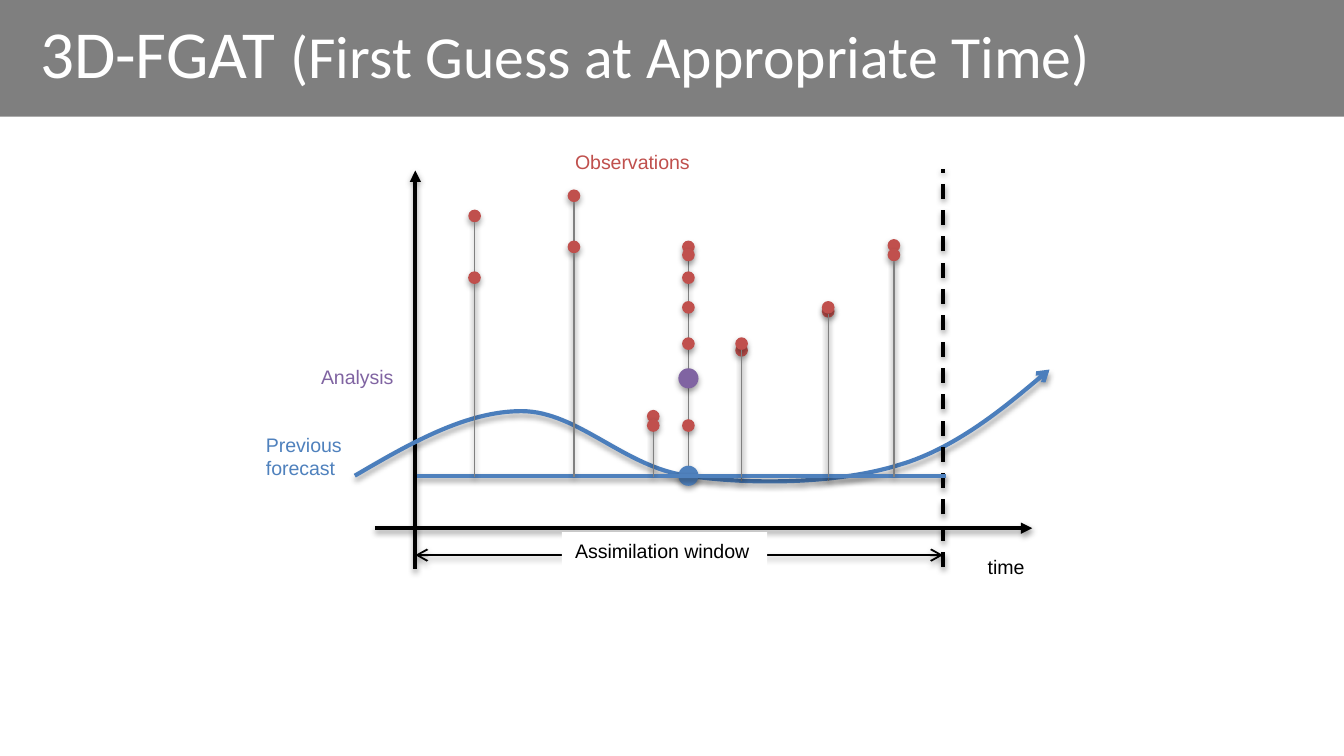
from pptx import Presentation
from pptx.dml.color import RGBColor
from pptx.enum.dml import MSO_LINE
from pptx.enum.shapes import MSO_CONNECTOR, MSO_SHAPE
from pptx.enum.text import MSO_ANCHOR
from pptx.oxml import parse_xml
from pptx.oxml.ns import qn, nsdecls
from pptx.util import Pt
from lxml import etree

BLACK, WHITE, GREY = "000000", "FFFFFF", "808080"
RED, BLUE, CURVE_BLUE, PURPLE = "C0504D", "4F81BD", "4B7EBC", "8064A2"
DOT, STATE = 6.8, 10.8  # diameters

# Observation stalks: x, dot centre, foot of the stalk
BACK_STALKS = [(119.3, 39.7, 146.5), (308.7, 90.8, 181.8), (343.9, 55.5, 174.6),
               (262.3, 111.7, 181.8), (215, 147, 174.6), (172.5, 28.9, 151.5)]
FRONT_STALKS = [(119.2, 72.8, 179.5), (172.5, 56.3, 179.5), (215, 152, 179.5),
                (262.3, 108.1, 179.5), (308.7, 88.7, 179.5), (343.9, 60.6, 179.5)]
CENTRE_X, BASE_Y = 233.8, 178.9
CENTRE_DOTS = [72.8, 56.3, 152, 108.1, 88.7, 60.6]
WINDOW = (87.5, 370.2)  # left and right end of the assimilation window
# Start point, then two handles and an end point for each Bezier segment
FORECAST = [(55.1, 178.9),
            (84.6, 161.6), (114.8, 144.3), (144.4, 144.3),
            (174.6, 144.3), (199.8, 174.6), (233.6, 178.9),
            (267.5, 183.9), (314.3, 183.2), (346.7, 173.1),
            (379.1, 163.8), (427.3, 122), (427.3, 122)]
LABELS = [("time", 387, 217.8, 34.6, 20.2, BLACK),
          ("Previous\nforecast", 0.4, 152.2, 56, 32.4, BLUE),
          ("Observations", 166, 1, 77, 20.2, RED),
          ("Analysis", 29.9, 116.2, 54, 20.2, PURPLE)]


def rgb(value):
    return RGBColor.from_string(value)


def add_shadow(sp, alpha=35, dist=1.8):
    sp._element.spPr.append(parse_xml(
        f'<a:effectLst {nsdecls("a")}><a:outerShdw blurRad="{Pt(3.1)}" dist="{Pt(dist)}" '
        f'dir="5400000" rotWithShape="0"><a:srgbClr val="{BLACK}">'
        f'<a:alpha val="{alpha * 1000}"/></a:srgbClr></a:outerShdw></a:effectLst>'))


def set_line(sp, color, width, head=None, tail=None, dash=None):
    sp.line.color.rgb = rgb(color)
    sp.line.width = Pt(width)
    if dash:
        sp.line.dash_style = dash
    ln = sp._element.spPr.find(qn("a:ln"))
    for tag, kind in (("a:headEnd", head), ("a:tailEnd", tail)):
        if kind:
            etree.SubElement(ln, qn(tag)).set("type", kind)


def set_text(tf, paragraphs, **formats):
    """Fill a frame; each paragraph is a list of (text, size) runs."""
    for i, runs in enumerate(paragraphs):
        p = tf.paragraphs[0] if i == 0 else tf.add_paragraph()
        for text, size in runs:
            r = p.add_run()
            r.text = text
            r.font.color.rgb = rgb(formats["color"])
            for name, value in {"name": formats["font"], "size": Pt(size)}.items():
                setattr(r.font, name, value)


def add_block(slide, kind, x, y, w, h, fill):
    sp = slide.shapes.add_shape(kind, Pt(x), Pt(y), Pt(w), Pt(h))
    sp.fill.solid()
    sp.fill.fore_color.rgb = rgb(fill)
    sp.line.fill.background()
    return sp


def add_title(slide, x, y, w, h):
    # Half-transparent band
    band = add_block(slide, MSO_SHAPE.RECTANGLE, x, y, w, h, BLACK)
    band.shadow.inherit = False
    color = band._element.spPr.find(qn("a:solidFill"))[0]
    etree.SubElement(color, qn("a:alpha")).set("val", "50000")
    # Title text
    tf = slide.shapes.add_textbox(Pt(x + 14.4), Pt(y), Pt(600.5), Pt(h - 7.2)).text_frame
    tf.word_wrap = True
    tf.vertical_anchor = MSO_ANCHOR.MIDDLE
    set_text(tf, [[("3D-FGAT ", 36), ("(First Guess at Appropriate Time)", 32)]],
             font="Calibri", color=WHITE)


def add_diagram(slide, left, top):
    def line(x1, y1, x2, y2, color, width, **ends):
        cx = slide.shapes.add_connector(MSO_CONNECTOR.STRAIGHT, Pt(left + x1), Pt(top + y1),
                                        Pt(left + x2), Pt(top + y2))
        set_line(cx, color, width, **ends)
        add_shadow(cx, 38, 1.6)

    def dot(x, y, size, color):
        add_shadow(add_block(slide, MSO_SHAPE.OVAL, left + x - size / 2, top + y - size / 2,
                             size, size, color))

    def stalks(items):
        for x, y, foot in items:
            dot(x, y, DOT, RED)
            line(x, y + DOT / 2, x, foot, GREY, 0.75)

    def forecast_curve():
        points = [(Pt(left + x), Pt(top + y)) for x, y in FORECAST]
        builder = slide.shapes.build_freeform(*points[0])
        builder.add_line_segments(points[1:], close=False)
        sp = builder.convert_to_shape()
        # Every three straight steps become one Bezier segment
        steps = list(sp._element.iter(qn("a:lnTo")))
        for i in range(0, len(steps), 3):
            curve = etree.Element(qn("a:cubicBezTo"))
            steps[i].addprevious(curve)
            for step in steps[i:i + 3]:
                curve.append(step[0])
                step.getparent().remove(step)
        sp.fill.background()
        set_line(sp, CURVE_BLUE, 2.25, tail="arrow")
        add_shadow(sp)

    start, end = WINDOW
    # Axes, forecast and window end
    line(CENTRE_X, 56.5, CENTRE_X, 176, GREY, 0.75)
    line(65.9, 207, 418, 207, BLACK, 2, tail="triangle")
    line(start, 228.6, start, 15.4, BLACK, 2, tail="triangle")
    forecast_curve()
    line(end, 227.8, end, 14.7, BLACK, 2, dash=MSO_LINE.DASH)

    stalks(BACK_STALKS)

    # Assimilation window
    line(start, 221.4, end, 221.4, BLACK, 1, head="arrow", tail="arrow")
    box = add_block(slide, MSO_SHAPE.RECTANGLE, left + 166, top + 209.1, 110, 20.2, WHITE)
    box.shadow.inherit = False
    box.text_frame.word_wrap = False
    box.text_frame.vertical_anchor = MSO_ANCHOR.TOP
    set_text(box.text_frame, [[("Assimilation window", 10.5)]], font="Arial", color=BLACK)
    box.text_frame.paragraphs[0].alignment = 1

    # Background state and its level
    dot(CENTRE_X, BASE_Y, STATE, BLUE)
    line(88.2, BASE_Y, 371.9, BASE_Y, BLUE, 2)

    # Observations moved to the analysis time
    stalks(FRONT_STALKS)
    for y in CENTRE_DOTS:
        dot(CENTRE_X, y, DOT, RED)
    dot(CENTRE_X, 126.7, STATE, PURPLE)

    # Labels
    for text, x, y, w, h, color in LABELS:
        tf = slide.shapes.add_textbox(Pt(left + x), Pt(top + y), Pt(w), Pt(h)).text_frame
        tf.word_wrap = False
        set_text(tf, [[(row, 10.5)] for row in text.split("\n")], font="Arial", color=color)


def main():
    prs = Presentation()
    prs.slide_width, prs.slide_height = Pt(720), Pt(405)
    slide = prs.slides.add_slide(prs.slide_layouts[6])
    add_title(slide, 0, 0, 720, 62.6)
    add_diagram(slide, 135, 76)
    prs.save("out.pptx")


if __name__ == "__main__":
    main()
